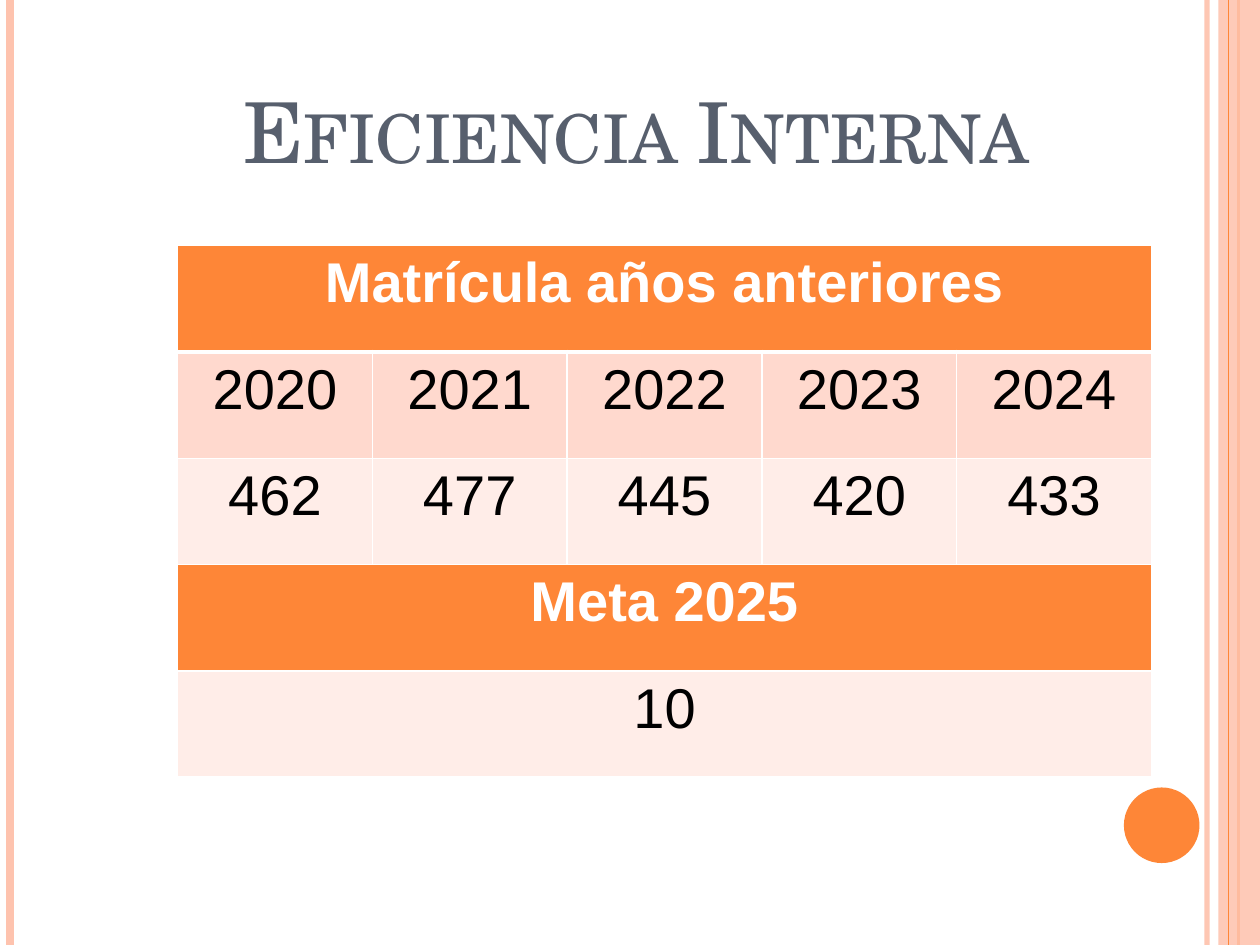
import pptx
import pptx.dml.color
import pptx.enum.shapes
import pptx.enum.text
import pptx.oxml
import pptx.oxml.ns
import pptx.util

Inches = pptx.util.Inches
SHAPES = pptx.enum.shapes.MSO_SHAPE

THEME = {
    "orange": "FE8637", "peach": "FEC3AE", "slate": "575F6D",
    "band_dark": "FFD9CE", "band_light": "FFEDE8",
    "white": "FFFFFF", "black": "000000",
    "title_font": "TeX Gyre Schola", "body_font": "Arial",
    "title_size": 48, "body_size": 32,
}

SLIDE_WIDTH, SLIDE_HEIGHT = 10, 7.5
TITLE = "Eficiencia Interna"
TITLE_BOX = (0.55, 0.23, 9, 1.25)
TABLE_BOX = (1.41, 1.95, 7.73, 4.22)

# (fill, heading row?, texts); a single text spans the whole row
ROWS = [
    ("orange", True, ["Matrícula años anteriores"]),
    ("band_dark", False, ["2020", "2021", "2022", "2023", "2024"]),
    ("band_light", False, ["462", "477", "445", "420", "433"]),
    ("orange", True, ["Meta 2025"]),
    ("band_light", False, ["10"]),
]

# (x, colour, width in points, opacity in percent)
STRIPES_BEHIND = [(9.58, "peach", 3, 93), (0.08, "peach", 4.5, 100), (9.83, "orange", 1.5, 100)]
STRIPES_FRONT = [(9.75, "orange", 0.75, 100)]
# (shape, box, colour, opacity in percent)
SIDE_BAND = (SHAPES.RECTANGLE, (9.67, 0, 0.33, SLIDE_HEIGHT), "peach", 87)
DOT = (SHAPES.OVAL, (8.92, 6.25, 0.6, 0.6), "orange", 100)


def rgb(name):
    return pptx.dml.color.RGBColor.from_string(THEME[name])


def paint(fill, colour, opacity=100):
    fill.solid()
    fill.fore_color.rgb = rgb(colour)
    if opacity < 100:
        colour_element = fill._xPr.find(".//" + pptx.oxml.ns.qn("a:srgbClr"))
        alpha = pptx.oxml.parse_xml(
            f'<a:alpha {pptx.oxml.ns.nsdecls("a")} val="{opacity * 1000}"/>')
        colour_element.append(alpha)


def add_stripe(slide, x, colour, width, opacity):
    stripe = slide.shapes.add_connector(
        pptx.enum.shapes.MSO_CONNECTOR.STRAIGHT,
        Inches(x), 0, Inches(x), Inches(SLIDE_HEIGHT))
    stripe.line.width = pptx.util.Pt(width)
    paint(stripe.line.fill, colour, opacity)
    stripe._element.spPr.append(
        pptx.oxml.parse_xml(f'<a:effectLst {pptx.oxml.ns.nsdecls("a")}/>'))


def add_plain_shape(slide, kind, box, colour, opacity):
    shape = slide.shapes.add_shape(kind, *map(Inches, box))
    shape.shadow.inherit = False
    shape.line.fill.background()
    paint(shape.fill, colour, opacity)


def write(frame, text, colour, **formats):
    """Put one centred span in the frame and return it."""
    para = frame.paragraphs[0]
    para.alignment = pptx.enum.text.PP_ALIGN.CENTER
    span = para.add_run()
    span.text = text
    span.font.color.rgb = rgb(colour)
    for name, value in formats.items():
        setattr(span.font, name, value)
    return span


def add_title(slide):
    box = slide.shapes.add_textbox(*map(Inches, TITLE_BOX))
    frame = box.text_frame
    frame.word_wrap = True
    frame.vertical_anchor = pptx.enum.text.MSO_ANCHOR.BOTTOM
    span = write(frame, TITLE, "slate", name=THEME["title_font"],
                 size=pptx.util.Pt(THEME["title_size"]))
    span._r.get_or_add_rPr().set("cap", "small")


def set_borders(cell, widths):
    """Draw white borders; widths maps L, R, T and B to points."""
    properties = cell._tc.get_or_add_tcPr()
    for position, (side, width) in enumerate(widths.items()):
        properties.insert(position, pptx.oxml.parse_xml(
            f'<a:ln{side} {pptx.oxml.ns.nsdecls("a")} w="{pptx.util.Pt(width)}">'
            f'<a:solidFill><a:srgbClr val="{THEME["white"]}"/></a:solidFill></a:ln{side}>'))


def add_enrolment_table(slide):
    column_count = max(len(texts) for _, _, texts in ROWS)
    table = slide.shapes.add_table(
        len(ROWS), column_count, *map(Inches, TABLE_BOX)).table
    for row, (fill, heading, texts) in enumerate(ROWS):
        for column in range(column_count):
            cell = table.cell(row, column)
            paint(cell.fill, fill)
            set_borders(cell, {"L": 1, "R": 1, "T": 3 if row == 1 else 1,
                               "B": 3 if row == 0 else 1})
        if len(texts) == 1:
            table.cell(row, 0).merge(table.cell(row, column_count - 1))
        for column, text in enumerate(texts):
            write(table.cell(row, column).text_frame, text,
                  "white" if heading else "black", name=THEME["body_font"],
                  size=pptx.util.Pt(THEME["body_size"]), bold=heading)


def main():
    deck = pptx.Presentation()
    deck.slide_width, deck.slide_height = Inches(SLIDE_WIDTH), Inches(SLIDE_HEIGHT)
    slide = deck.slides.add_slide(deck.slide_layouts[6])
    paint(slide.background.fill, "white")
    for stripe in STRIPES_BEHIND:
        add_stripe(slide, *stripe)
    add_plain_shape(slide, *SIDE_BAND)
    for stripe in STRIPES_FRONT:
        add_stripe(slide, *stripe)
    add_plain_shape(slide, *DOT)
    add_title(slide)
    add_enrolment_table(slide)
    deck.save("out.pptx")


if __name__ == "__main__":
    main()
